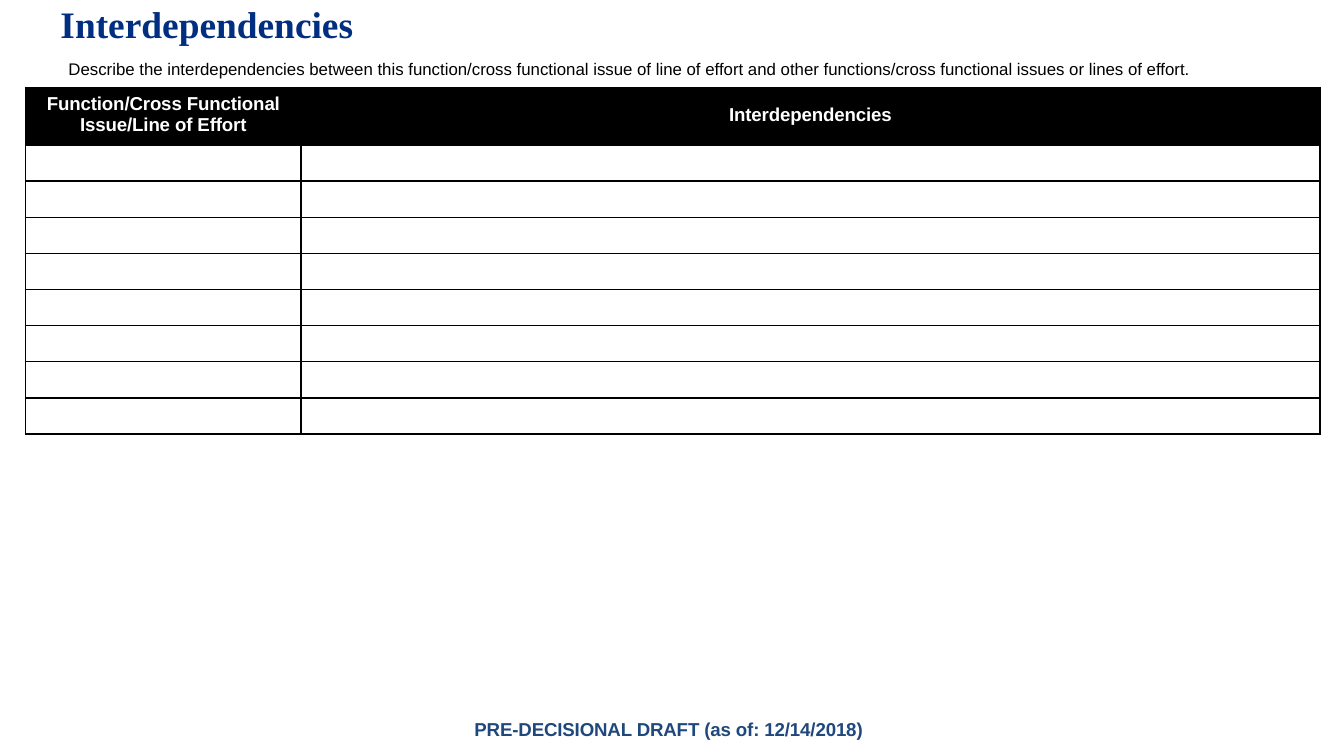
import pptx
import pptx.util
import pptx.dml.color
import pptx.enum.text
import pptx.oxml
import pptx.oxml.ns

Inches, Pt = pptx.util.Inches, pptx.util.Pt
COLORS = {"title": "002E80", "footer": "1F487C", "ink": "000000", "paper": "FFFFFF"}


def add_line(para, text, font, size, color, bold=True, spacing=0):
    span = para.add_run()
    span.text = text
    span.font.name = font
    span.font.size = Pt(size)
    span.font.bold = bold
    span.font.color.rgb = pptx.dml.color.RGBColor.from_string(COLORS[color])
    if spacing:
        # Letter spacing in hundredths of a point
        span._r.get_or_add_rPr().set("spc", str(spacing))


def place_text(box, left, top, width, height, inset):
    box.left, box.top = Inches(left), Inches(top)
    box.width, box.height = Inches(width), Inches(height)
    frame = box.text_frame
    frame.word_wrap = True
    frame.vertical_anchor = pptx.enum.text.MSO_ANCHOR.TOP
    frame.margin_left = Inches(0.01)
    frame.margin_right = frame.margin_bottom = 0
    frame.margin_top = Inches(inset)
    para = frame.paragraphs[0]
    para.alignment = pptx.enum.text.PP_ALIGN.LEFT
    return para


# Widescreen page, 16 by 9
deck = pptx.Presentation()
deck.slide_width = Inches(10)
deck.slide_height = deck.slide_width * 9 // 16
page = deck.slides.add_slide(deck.slide_layouts[5])

# Title
para = place_text(page.shapes.title, 0.44, 0, 2.21, 0.36, 0.01)
add_line(para, "Interdependencies", "Times New Roman", 20, "title")

# Footer
footer = page.shapes.add_textbox(0, 0, 0, 0)
para = place_text(footer, 3.52, 5.34, 2.95, 0.18, 0)
add_line(para, "PRE-DECISIONAL DRAFT (as of: 12/14/2018)", "Arial", 10, "footer", spacing=-5)

# Instruction
instruction = page.shapes.add_textbox(0, 0, 0, 0)
para = place_text(instruction, 0.5, 0.43, 8.37, 0.18, 0.01)
add_line(para, "Describe the interdependencies between this function/cross functional issue "
         "of line of effort and other functions/cross functional issues or lines of effort.",
         "Arial", 9, "ink", bold=False)

# Table grid: one header row and eight equal empty rows
columns = [2.05, 7.58]
table_height, header_height, body_rows = 2.58, 0.43, 8
row_height = (table_height - header_height) / body_rows
headers = [(["Function/Cross Functional", "Issue/Line of Effort"], 0.05),
           (["Interdependencies"], 0.13)]
table = page.shapes.add_table(
    body_rows + 1, len(columns), Inches(0.19), Inches(0.65),
    Inches(sum(columns)), Inches(table_height)).table
table.horz_banding = False
for column, width in zip(table.columns, columns):
    column.width = Inches(width)
for index, row in enumerate(table.rows):
    row.height = Inches(row_height if index else header_height)

# Cell fills, margins and borders
for index, row in enumerate(table.rows):
    for cell in row.cells:
        cell.margin_left = cell.margin_right = cell.margin_top = cell.margin_bottom = 0
        properties = cell._tc.get_or_add_tcPr()
        for side in ("lnL", "lnR", "lnT", "lnB"):
            properties.append(pptx.oxml.parse_xml(
                f'<a:{side} {pptx.oxml.ns.nsdecls("a")} w="{Pt(1)}"><a:solidFill>'
                f'<a:srgbClr val="{COLORS["ink"]}"/></a:solidFill></a:{side}>'))
        cell.fill.solid()
        cell.fill.fore_color.rgb = pptx.dml.color.RGBColor.from_string(
            COLORS["paper" if index else "ink"])
        if index:
            # Small end mark keeps the empty rows at their set height
            cell.text_frame.paragraphs[0]._p.get_or_add_endParaRPr().set("sz", "1000")

# Header wording
for cell, (lines, inset) in zip(table.rows[0].cells, headers):
    cell.margin_top = Inches(inset)
    for number, line in enumerate(lines):
        frame = cell.text_frame
        para = frame.add_paragraph() if number else frame.paragraphs[0]
        para.alignment = pptx.enum.text.PP_ALIGN.CENTER
        add_line(para, line, "Arial", 10, "paper", spacing=-5)

deck.save("out.pptx")
